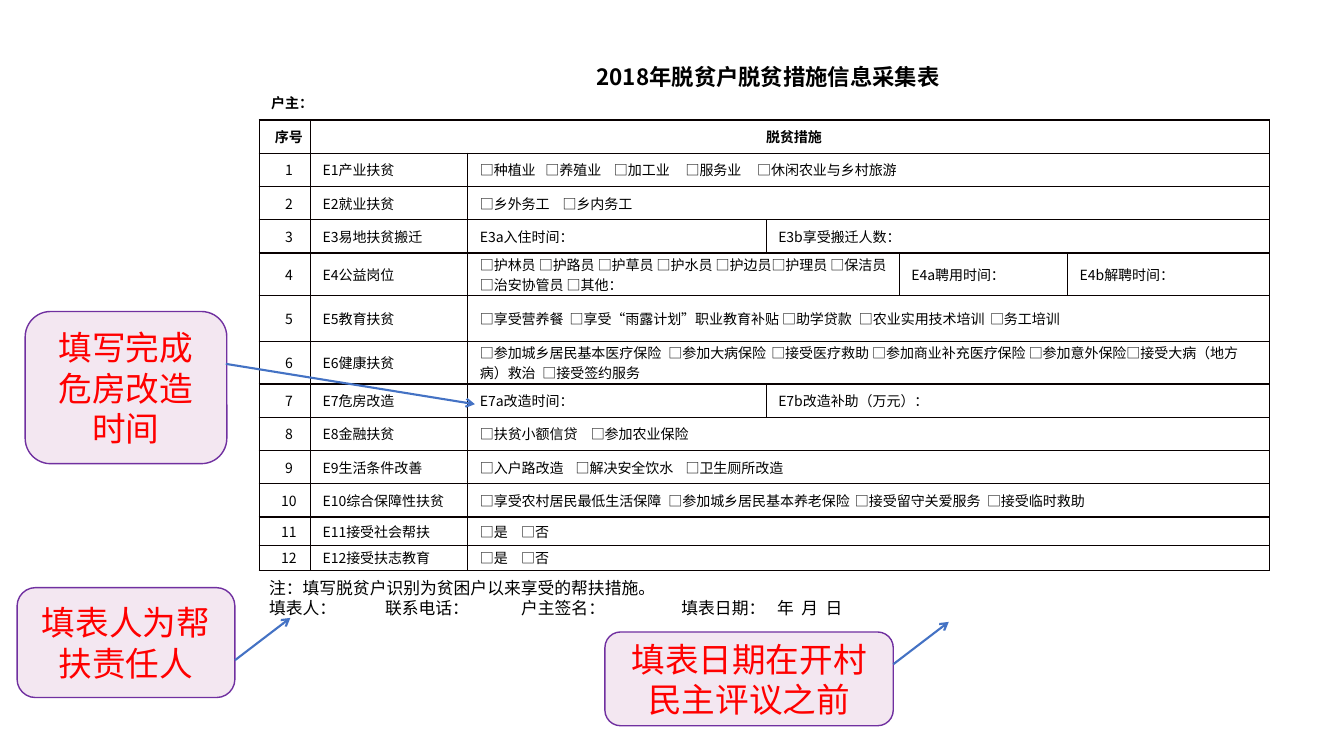
from lxml import etree
from pptx import Presentation
from pptx.dml.color import RGBColor
from pptx.enum.shapes import MSO_CONNECTOR, MSO_SHAPE
from pptx.enum.text import MSO_ANCHOR, MSO_AUTO_SIZE, PP_ALIGN
from pptx.oxml.ns import qn
from pptx.util import Inches, Pt

ROUND = MSO_SHAPE.ROUNDED_RECTANGLE
LINE = MSO_CONNECTOR.STRAIGHT
MIDDLE = MSO_ANCHOR.MIDDLE
GROW = MSO_AUTO_SIZE.SHAPE_TO_FIT_TEXT
CENTER = PP_ALIGN.CENTER
LEFT = PP_ALIGN.LEFT

NOTO = "Noto Sans CJK SC"
ARIAL = "Arial"
BLACK, WHITE, RED = "000000", "FFFFFF", "FF0000"
BORDER, PINK, PURPLE, BLUE = "080000", "F3E7F1", "7030A0", "4472C4"

COLS = [0.51, 1.56, 2.96, 1.32, 1.67, 2]
HEIGHTS = [0.67] + [0.33] * 4 + [0.42, 0.46, 0.42] + [0.33] * 4 + [0.28, 0.25]

# Each measure: label, then cells of (text, columns spanned, tab stops)
ROWS = [
    ("E1产业扶贫", [("□种植业\t□养殖业\t□加工业\t□服务业\t□休闲农业与乡村旅游", 4,
                 [0.65, 1.33, 2.04, 2.75])]),
    ("E2就业扶贫", [("□乡外务工\t□乡内务工", 4, [0.82])]),
    ("E3易地扶贫搬迁", [("E3a入住时间：", 1, []), ("E3b享受搬迁人数：", 3, [])]),
    ("E4公益岗位", [("□护林员 □护路员 □护草员 □护水员 □护边员□护理员 □保洁员 "
                 "□治安协管员 □其他：", 2, []),
                ("E4a聘用时间：", 1, []), ("E4b解聘时间：", 1, [])]),
    ("E5教育扶贫", [("□享受营养餐\t□享受“雨露计划”职业教育补贴 □助学贷款\t"
                 "□农业实用技术培训\t□务工培训", 4, [0.89, 3.76, 5.06])]),
    ("E6健康扶贫", [("□参加城乡居民基本医疗保险\t□参加大病保险\t□接受医疗救助 "
                 "□参加商业补充医疗保险 □参加意外保险□接受大病（地方病）救治\t"
                 "□接受签约服务", 4, [0.62, 1.87, 2.89])]),
    ("E7危房改造", [("E7a改造时间：", 1, []), ("E7b改造补助（万元）：", 3, [])]),
    ("E8金融扶贫", [("□扶贫小额信贷\t□参加农业保险", 4, [1.1])]),
    ("E9生活条件改善", [("□入户路改造\t□解决安全饮水\t□卫生厕所改造", 4, [0.95, 2.04])]),
    ("E10综合保障性扶贫", [("□享受农村居民最低生活保障\t□参加城乡居民基本养老保险\t"
                    "□接受留守关爱服务\t□接受临时救助", 4, [1.87, 3.72, 5.03])]),
    ("E11接受社会帮扶", [("□是\t□否", 4, [0.41])]),
    ("E12接受扶志教育", [("□是\t□否", 4, [0.41])]),
]

CALLOUTS = [
    ("填写完成危房改造时间", (0.25, 3.09, 2, 1.51), (2.24, 3.61, 4.71, 4.01)),
    ("填表人为帮扶责任人", (0.17, 5.83, 2.16, 1.09), (2.33, 6.55, 2.88, 6.13)),
    ("填表日期在开村民主评议之前", (6, 6.27, 2.86, 0.93), (8.86, 6.59, 9.41, 6.17)),
]


def color(code):
    return RGBColor.from_string(code)


def inches(values):
    return [Inches(value) for value in values]


def add_run(para, text, size, face, ink=BLACK, bold=False, under=False):
    run = para.add_run()
    run.text = text
    font = run.font
    font.size, font.name, font.bold = Pt(size), face, bold
    font.underline = under
    font.color.rgb = color(ink)
    east = etree.SubElement(run._r.get_or_add_rPr(), qn("a:ea"))
    east.set("typeface", face)


def add_tabs(para, stops):
    if stops:
        tabs = etree.SubElement(para._p.get_or_add_pPr(), qn("a:tabLst"))
        for stop in stops:
            tab = etree.SubElement(tabs, qn("a:tab"))
            tab.set("pos", str(Inches(stop)))
            tab.set("algn", "l")


def add_edges(cell, shown):
    props = cell._tc.get_or_add_tcPr()
    for place, side in enumerate("LRTB"):
        edge = etree.Element(qn("a:ln" + side), w=str(Pt(1)))
        if side in shown:
            fill = etree.SubElement(edge, qn("a:solidFill"))
            etree.SubElement(fill, qn("a:srgbClr"), val=BORDER)
        else:
            etree.SubElement(edge, qn("a:noFill"))
        props.insert(place, edge)


def style_cell(cell, shown):
    cell.fill.solid()
    cell.fill.fore_color.rgb = color(WHITE)
    cell.vertical_anchor = MIDDLE
    cell.margin_left, cell.margin_right = Inches(0.12), Inches(0.04)
    cell.margin_top = cell.margin_bottom = 0
    add_edges(cell, shown)


def fill_cell(table, row, col, text, span=1, stops=(), align=LEFT, size=10, bold=False):
    cell = table.cell(row, col)
    if span > 1:
        cell.merge(table.cell(row, col + span - 1))
    para = cell.text_frame.paragraphs[0]
    para.alignment = align
    add_tabs(para, stops)
    add_run(para, text, size, NOTO, bold=bold)
    return cell


def add_form(slide):
    box = inches((2.57, 0.52, sum(COLS), sum(HEIGHTS)))
    table = slide.shapes.add_table(len(HEIGHTS), len(COLS), *box).table
    table.first_row = table.horz_banding = False
    for col, width in zip(table.columns, COLS):
        col.width = Inches(width)
    for index, (row, height) in enumerate(zip(table.rows, HEIGHTS)):
        row.height = Inches(height)
        for cell in row.cells:
            style_cell(cell, "LRTB" if index else "B")

    title = fill_cell(table, 0, 0, "2018年脱贫户脱贫措施信息采集表", len(COLS),
                      align=CENTER, size=16, bold=True)
    owner = title.text_frame.add_paragraph()
    add_tabs(owner, [0.7])
    add_run(owner, "户主：", 10, NOTO, bold=True)
    add_run(owner, "\t", 10, NOTO, bold=True, under=True)
    fill_cell(table, 1, 0, "序号", align=CENTER, bold=True)
    fill_cell(table, 1, 1, "脱贫措施", 5, align=CENTER, bold=True)

    for number, (label, cells) in enumerate(ROWS, 1):
        row, col = number + 1, 2
        fill_cell(table, row, 0, str(number), align=CENTER)
        fill_cell(table, row, 1, label)
        for text, span, stops in cells:
            fill_cell(table, row, col, text, span, stops)
            col += span


def add_note(slide):
    frame = slide.shapes.add_textbox(*inches((2.57, 5.68, 10.01, 0.5))).text_frame
    frame.word_wrap = True
    frame.auto_size = GROW
    add_run(frame.paragraphs[0], "注：填写脱贫户识别为贫困户以来享受的帮扶措施。", 12, ARIAL)
    para = frame.add_paragraph()
    add_tabs(para, [1.15, 2.5, 4.09, 5.04, 5.28, 5.52])
    add_run(para, "填表人：\t联系电话：\t户主签名：\t填表日期：\t年\t月\t日", 12, ARIAL)


def add_callout(slide, text, box):
    shape = slide.shapes.add_shape(ROUND, *inches(box))
    shape.shadow.inherit = False
    shape.fill.solid()
    shape.fill.fore_color.rgb = color(PINK)
    shape.line.color.rgb = color(PURPLE)
    shape.line.width = Pt(1)
    frame = shape.text_frame
    frame.word_wrap = True
    frame.vertical_anchor = MIDDLE
    para = frame.paragraphs[0]
    para.alignment = CENTER
    add_run(para, text, 24, ARIAL, RED)


def add_arrow(slide, ends):
    arrow = slide.shapes.add_connector(LINE, *inches(ends))
    arrow.line.color.rgb = color(BLUE)
    arrow.line.width = Pt(1.5)
    etree.SubElement(arrow.line._get_or_add_ln(), qn("a:tailEnd"), type="arrow")
    etree.SubElement(arrow._element.spPr, qn("a:effectLst"))


def main():
    deck = Presentation()
    deck.slide_width, deck.slide_height = inches((13.33, 7.5))
    slide = deck.slides.add_slide(deck.slide_layouts[6])
    add_form(slide)
    add_note(slide)
    for text, box, ends in CALLOUTS:
        add_callout(slide, text, box)
        add_arrow(slide, ends)
    deck.save("out.pptx")


if __name__ == "__main__":
    main()
